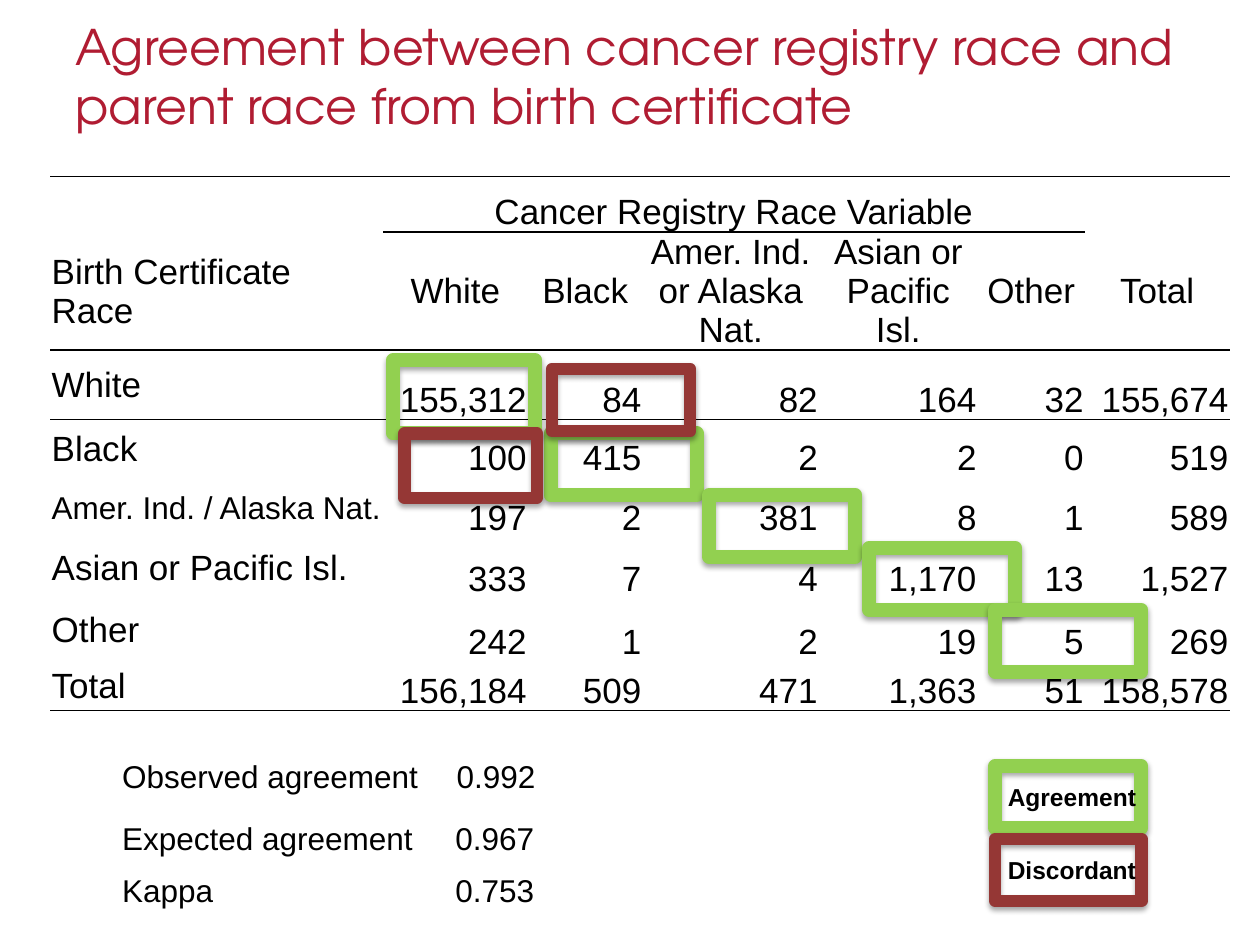
from lxml import etree
from pptx import Presentation
from pptx.dml.color import RGBColor
from pptx.enum.shapes import MSO_SHAPE
from pptx.enum.text import MSO_ANCHOR, MSO_AUTO_SIZE, PP_ALIGN
from pptx.oxml.ns import qn
from pptx.util import Inches, Pt

RECT = MSO_SHAPE.RECTANGLE
LEFT, CENTER, RIGHT = PP_ALIGN.LEFT, PP_ALIGN.CENTER, PP_ALIGN.RIGHT
TOP, MIDDLE, BOTTOM = MSO_ANCHOR.TOP, MSO_ANCHOR.MIDDLE, MSO_ANCHOR.BOTTOM
PLAIN = "{2D5ABB26-0587-4C30-8999-92F81FD0307C}"  # table style without grid
GREEN, RED = "92D050", "953735"


def color(text):
    return RGBColor.from_string(text)


def node(parent, tag, **attrs):
    item = etree.SubElement(parent, qn(tag))
    for name, value in attrs.items():
        item.set(name, str(value))
    return item


class Page:
    font = "Arial"
    ink = "000000"

    def __init__(self, slide):
        self.slide = slide
        self.shapes = slide.shapes

    def style(self, para, size, align=LEFT, bold=False, font=None, ink=None):
        para.alignment = align
        para.font.name = font or self.font
        para.font.size = Pt(size)
        para.font.bold = bold
        para.font.color.rgb = color(ink or self.ink)

    def title(self, text, x, y, w, h):
        shape = self.shapes.title
        shape.left, shape.top, shape.width, shape.height = map(Inches, (x, y, w, h))
        frame = shape.text_frame
        frame.text = text
        frame.vertical_anchor = TOP
        frame.auto_size = MSO_AUTO_SIZE.NONE
        self.style(frame.paragraphs[0], 28, font="TeX Gyre Adventor", ink="B01C32")

    def table(self, x, y, cols, rows):
        frame = self.shapes.add_table(len(rows), len(cols), Inches(x), Inches(y),
                                      Inches(sum(cols)), Inches(sum(rows)))
        grid = frame.table
        grid.first_row = grid.horz_banding = False
        frame._element.find(".//" + qn("a:tableStyleId")).text = PLAIN
        for col, width in zip(grid.columns, cols):
            col.width = Inches(width)
        for row, height in zip(grid.rows, rows):
            row.height = Inches(height)
        return grid

    def cell(self, cell, text, size, align, anchor, edges=()):
        cell.margin_left = cell.margin_right = cell.margin_top = Inches(0.01)
        cell.margin_bottom = 0
        cell.vertical_anchor = anchor
        cell.text = text
        self.style(cell.text_frame.paragraphs[0], size, align)
        props = cell._tc.get_or_add_tcPr()
        for edge in edges:
            line = node(props, "a:" + edge, w=Pt(1))
            node(node(line, "a:solidFill"), "a:srgbClr", val=self.ink)
        cell.fill.background()

    def frame(self, group, x, y, w, h, line, width):
        box = group.shapes.add_shape(RECT, *map(Inches, (x, y, w, h)))
        box.fill.background()
        box.line.color.rgb = color(line)
        box.line.width = Pt(width)
        box.shadow.inherit = False
        effect = box._element.spPr.find(qn("a:effectLst"))
        shade = node(effect, "a:outerShdw", blurRad=Pt(3.1), dist=Pt(1.8),
                     dir=5400000, rotWithShape=0)
        node(node(shade, "a:srgbClr", val="000000"), "a:alpha", val=35000)

    def label(self, group, text, x, y, w, h):
        box = group.shapes.add_textbox(*map(Inches, (x, y, w, h)))
        frame = box.text_frame
        frame.text = text
        frame.word_wrap = False
        frame.auto_size = MSO_AUTO_SIZE.SHAPE_TO_FIT_TEXT
        self.style(frame.paragraphs[0], 14, bold=True)


HEADS = ["Birth Certificate Race", "White", "Black", "Amer. Ind. or Alaska Nat.",
         "Asian or Pacific Isl.", "Other", "Total"]
COUNTS = [
    ["White", "155,312", "84", "82", "164", "32", "155,674"],
    ["Black", "100", "415", "2", "2", "0", "519"],
    ["Amer. Ind. / Alaska Nat.", "197", "2", "381", "8", "1", "589"],
    ["Asian or Pacific Isl.", "333", "7", "4", "1,170", "13", "1,527"],
    ["Other", "242", "1", "2", "19", "5", "269"],
    ["Total", "156,184", "509", "471", "1,363", "51", "158,578"],
]
# Name, value, top, column widths
STATS = [
    ("Observed agreement", "0.992", 6, [2.44, 0.86]),
    ("Expected agreement", "0.967", 6.49, [2.52, 0.77]),
    ("Kappa", "0.753", 6.91, [1.54, 1.75]),
]
AGREE = [(4.37, 3.44, 1.16, 0.49), (3.12, 2.86, 1.13, 0.58), (5.63, 3.93, 1.16, 0.49),
         (6.9, 4.35, 1.16, 0.49), (7.9, 4.84, 1.16, 0.49), (7.9, 6.08, 1.16, 0.49)]
DIFFER = [(4.38, 2.93, 1.1, 0.49), (3.21, 3.44, 1.05, 0.51), (7.9, 6.66, 1.16, 0.49)]


def main():
    deck = Presentation()
    deck.slide_width, deck.slide_height = Inches(10), Inches(7.5)
    page = Page(deck.slides.add_slide(deck.slide_layouts[5]))

    # Table of counts: spanning head, column heads, body
    grid = page.table(0.4, 1.4, [2.64, 1.15, 0.91, 1.4, 1.26, 0.85, 1.15],
                      [0.44, 0.94, 0.55, 0.46, 0.48, 0.48, 0.5, 0.39])
    grid.cell(0, 1).merge(grid.cell(0, 5))
    for c, head in enumerate(HEADS):
        inner = 1 <= c <= 5
        page.cell(grid.cell(0, c), "Cancer Registry Race Variable" if c == 1 else "",
                  20, CENTER, BOTTOM, ["lnT", "lnB"] if inner else ["lnT"])
        page.cell(grid.cell(1, c), head, 20, CENTER if c else LEFT, MIDDLE,
                  ["lnT", "lnB"] if inner else ["lnB"])
    for r, row in enumerate(COUNTS, 2):
        edges = {2: ["lnT"], 7: ["lnB"]}.get(r, [])
        for c, text in enumerate(row):
            size = 18 if text.startswith("Amer.") else 20
            page.cell(grid.cell(r, c), text, size, RIGHT if c else LEFT,
                      BOTTOM if c else MIDDLE, edges)

    page.title("Agreement between cancer registry race and parent race "
               "from birth certificate", 0.5, 0.08, 9, 1.45)

    # Agreement statistics
    for name, value, top, cols in STATS:
        stat = page.table(0.96, top, cols, [0.31])
        page.cell(stat.cell(0, 0), name, 18, LEFT, BOTTOM)
        page.cell(stat.cell(0, 1), value, 18, RIGHT, BOTTOM)

    # Frames around cells, with their legend
    for spots, line, width, name, top in [(AGREE, GREEN, 8, "Agreement", 6.16),
                                          (DIFFER, RED, 7, "Discordant", 6.74)]:
        group = page.shapes.add_group_shape()
        for spot in spots:
            page.frame(group, *spot, line, width)
        page.label(group, name, 7.9, top, 1.23, 0.34)

    deck.save("out.pptx")


if __name__ == "__main__":
    main()
